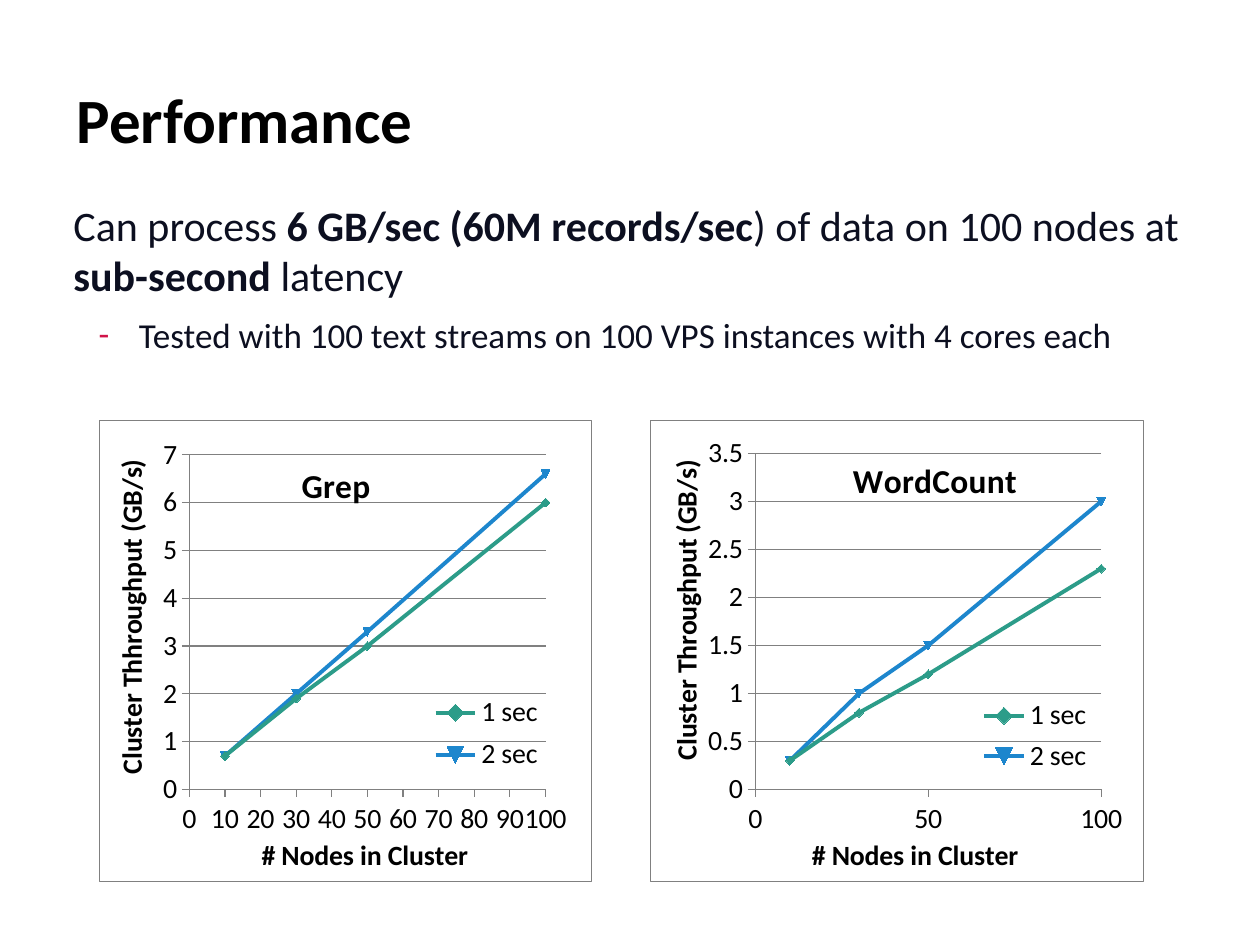
from lxml.etree import SubElement
from pptx import Presentation
from pptx.chart.data import XyChartData
from pptx.dml.color import RGBColor
from pptx.enum.chart import XL_CHART_TYPE, XL_LEGEND_POSITION, XL_TICK_MARK
from pptx.enum.text import MSO_ANCHOR, PP_ALIGN
from pptx.oxml import parse_xml
from pptx.oxml.ns import nsdecls, qn
from pptx.util import Pt

FONT = "Calibri"
BLACK, INK, RED, GREY = "000000", "0C0F20", "D11349", "808080"
SERIES_COLORS = {"1 sec": "2C9C89", "2 sec": "1D86CD"}
NODES = [10, 30, 50, 100]


def color(value):
    return RGBColor.from_string(value)


def style(font, size, value, bold=None):
    font.name, font.size, font.bold = FONT, Pt(size), bold
    font.color.rgb = color(value)


def set_box(frame, inset, anchor):
    frame.word_wrap = True
    frame.vertical_anchor = anchor
    frame.margin_left = frame.margin_right = Pt(inset)
    frame.margin_top = frame.margin_bottom = Pt(inset)


def add_heading(slide, left, top, width, height):
    heading = slide.shapes.title
    heading.left, heading.top = Pt(left), Pt(top)
    heading.width, heading.height = Pt(width), Pt(height)
    set_box(heading.text_frame, 1.8, MSO_ANCHOR.MIDDLE)
    heading.text_frame.text = "Performance"
    paragraph = heading.text_frame.paragraphs[0]
    paragraph.alignment = PP_ALIGN.LEFT
    style(paragraph.font, 36, BLACK, True)


def add_summary(slide, left, top, width, height):
    frame = slide.shapes.add_textbox(Pt(left), Pt(top), Pt(width), Pt(height)).text_frame
    set_box(frame, 0, MSO_ANCHOR.TOP)

    # Main claim, with its figures in bold
    claim = frame.paragraphs[0]
    for text, bold in [("Can process ", False), ("6 GB/sec (60M records/sec", True),
                       (") of data on 100 nodes at ", False),
                       ("sub-second", True), (" latency", False)]:
        run = claim.add_run()
        run.text = text
        style(run.font, 24, INK, bold)

    # Test setup as a dashed sub-point
    setup = frame.add_paragraph()
    setup.text = "Tested with 100 text streams on 100 VPS instances with 4 cores each"
    setup.level = 1
    setup.space_before = Pt(7.6)
    properties = setup._p.get_or_add_pPr()
    properties.set("marL", str(Pt(37.4)))
    properties.set("indent", str(Pt(-23)))
    bullet_color = SubElement(properties, qn("a:buClr"))
    SubElement(bullet_color, qn("a:srgbClr"), val=RED)
    SubElement(properties, qn("a:buFont"), typeface=FONT)
    SubElement(properties, qn("a:buChar"), char="-")
    style(setup.font, 20, INK)


def set_layout(part, x, y, width=None, height=None, inner=False):
    """Place a chart part by percentages of the chart area."""
    old = part.find(qn("c:layout"))
    if old is not None:
        part.remove(old)
    layout = parse_xml(f"<c:layout {nsdecls('c')}/>")
    manual = SubElement(layout, qn("c:manualLayout"))
    if inner:
        SubElement(manual, qn("c:layoutTarget"), val="inner")
    for mode in ("xMode", "yMode"):
        SubElement(manual, qn(f"c:{mode}"), val="edge")
    for key, percent in zip("xywh", (x, y, width, height)):
        if percent is not None:
            SubElement(manual, qn(f"c:{key}"), val=str(percent / 100))
    overlay = part.find(qn("c:overlay"))
    if overlay is None:
        part.insert(0, layout)
    else:
        overlay.addprevious(layout)


def set_axis(axis, title, maximum, step, grid):
    axis.minimum_scale, axis.maximum_scale, axis.major_unit = 0, maximum, step
    axis.major_tick_mark, axis.minor_tick_mark = XL_TICK_MARK.OUTSIDE, XL_TICK_MARK.NONE
    axis.has_major_gridlines = grid
    lines = [axis.format.line] + ([axis.major_gridlines.format.line] if grid else [])
    for line in lines:
        line.color.rgb, line.width = color(GREY), Pt(0.75)
    axis.tick_labels.number_format = "General"
    axis.tick_labels.number_format_is_linked = False
    axis.axis_title.text_frame.text = title
    style(axis.axis_title.text_frame.paragraphs[0].font, 16, BLACK, True)


def add_throughput_chart(slide, left, top, width, height, name, y_title, rates,
                         x_step, y_max, y_step, plot, name_at, y_title_at, legend_at):
    data = XyChartData()
    for label, values in zip(SERIES_COLORS, rates):
        points = data.add_series(label)
        for nodes, rate in zip(NODES, values):
            points.add_data_point(nodes, rate)
    chart = slide.shapes.add_chart(XL_CHART_TYPE.XY_SCATTER_LINES, Pt(left), Pt(top),
                                   Pt(width), Pt(height), data).chart
    style(chart.font, 16, BLACK)

    # Frame around the chart
    chart._chartSpace.find(qn("c:txPr")).addprevious(parse_xml(
        f'<c:spPr {nsdecls("c", "a")}><a:solidFill><a:srgbClr val="FFFFFF"/></a:solidFill>'
        f'<a:ln w="{Pt(0.75)}"><a:solidFill><a:srgbClr val="{GREY}"/></a:solidFill></a:ln>'
        '</c:spPr>'))

    # Title, legend and plot area
    chart.has_title = True
    chart.chart_title.text_frame.text = name
    style(chart.chart_title.text_frame.paragraphs[0].font, 19.2, BLACK, True)
    set_layout(chart.chart_title._element, *name_at)
    chart.has_legend = True
    chart.legend.position = XL_LEGEND_POSITION.BOTTOM
    chart.legend.include_in_layout = False
    style(chart.legend.font, 16, BLACK)
    set_layout(chart.legend._element, *legend_at)
    set_layout(chart._chartSpace.chart.plotArea, *plot, inner=True)

    # Axes
    set_axis(chart.category_axis, "# Nodes in Cluster", 100, x_step, False)
    set_axis(chart.value_axis, y_title, y_max, y_step, True)
    set_layout(chart.value_axis.axis_title._element, *y_title_at)

    # Automatic markers follow the series index: 1 diamond, 2 triangle
    chart.plots[0].vary_by_categories = False
    for index, series in enumerate(chart.plots[0].series, start=1):
        series._element.find(qn("c:idx")).set("val", str(index))
        series.smooth = False
        shade = color(SERIES_COLORS[series.name])
        series.format.line.color.rgb, series.format.line.width = shade, Pt(2.25)
        series.marker.size = 5
        series.marker.format.fill.solid()
        series.marker.format.fill.fore_color.rgb = shade
        series.marker.format.line.color.rgb = shade


def main():
    deck = Presentation()
    deck.slide_width, deck.slide_height = Pt(720), Pt(540)
    slide = deck.slides.add_slide(deck.slide_layouts[5])
    add_heading(slide, 42, 36.4, 632.9, 62.6)
    add_summary(slide, 42, 113.8, 648, 383.8)
    add_throughput_chart(
        slide, 371.5, 239.8, 282.4, 264.2, "WordCount", "Cluster Throughput (GB/s)",
        [(0.3, 0.8, 1.2, 2.3), (0.3, 1, 1.5, 3)], 50, 3.5, 0.5,
        plot=(21.2, 7.2, 70.2, 72.9), name_at=(39.8, 6.6), y_title_at=(2.3, 7.6),
        legend_at=(66, 59, 24, 19))
    add_throughput_chart(
        slide, 56.7, 239.8, 281.6, 264.2, "Grep", "Cluster Thhroughput (GB/s)",
        [(0.7, 1.9, 3, 6), (0.7, 2, 3.3, 6.6)], 10, 7, 1,
        plot=(18.2, 7.5, 72.5, 72.6), name_at=(39.8, 7.6), y_title_at=(1.5, 7.4),
        legend_at=(66.7, 58, 24, 20))
    deck.save("out.pptx")


if __name__ == "__main__":
    main()
